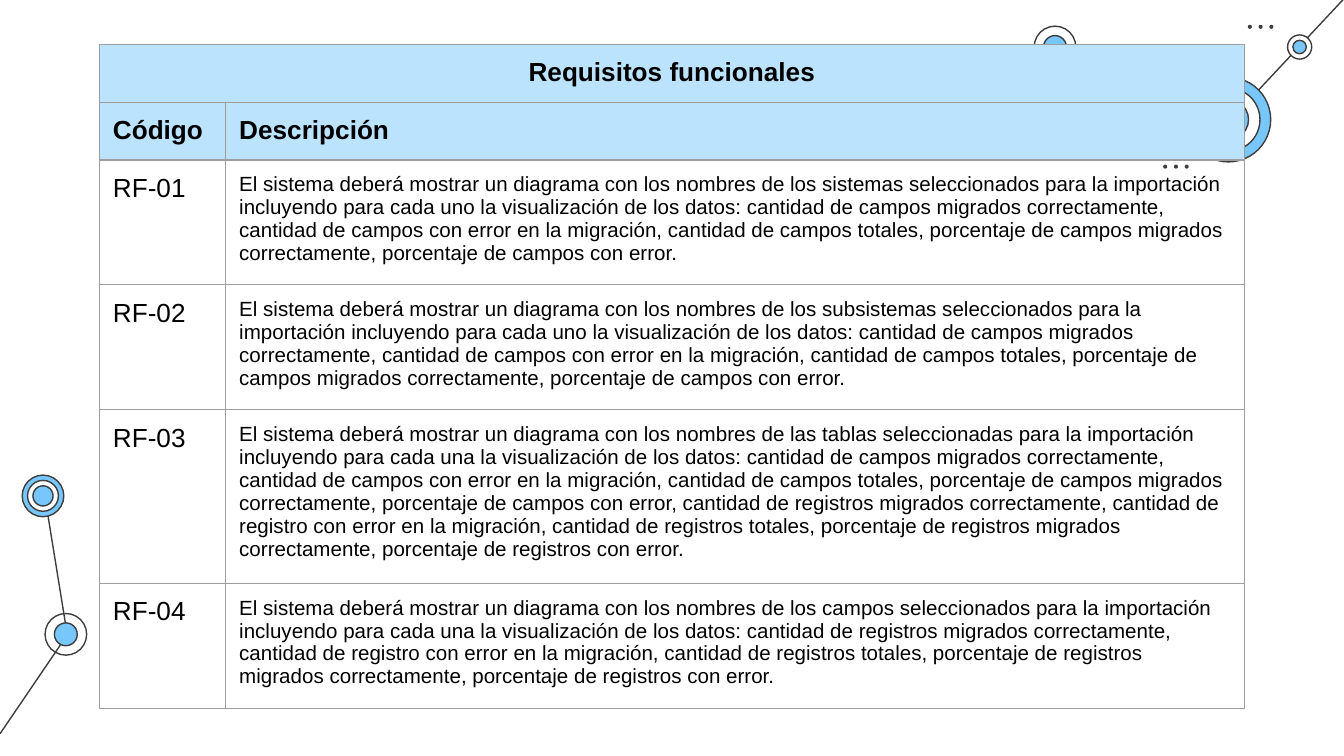
from lxml import etree
from pptx import Presentation
from pptx import util as u
from pptx.dml.color import RGBColor
from pptx.enum import shapes, text
from pptx.oxml import ns

COLORS = {"ink": "3D3D3D", "blue": "77C6FC", "pale": "BBE3FE",
          "white": "FFFFFF", "black": "000000", "border": "9E9E9E"}
PAGE_WIDTH = 10
PAGE_HEIGHT = PAGE_WIDTH * 9 / 16
HEADER_ROWS = 2
COLUMNS = [0.94, 7.58]
ROWS = [0.43, 0.43, 0.93, 0.93, 1.29, 0.93]


def color(name):
    """Return the named colour."""
    return RGBColor.from_string(COLORS[name])


def metrics(plural, with_error):
    """List the figures shown for one kind of item."""
    return (f"cantidad de {plural} migrados correctamente, "
            f"cantidad de {with_error} con error en la migración, "
            f"cantidad de {plural} totales, "
            f"porcentaje de {plural} migrados correctamente, "
            f"porcentaje de {plural} con error")


def requirement(selected, each, figures):
    """Word one functional requirement."""
    return (f"El sistema deberá mostrar un diagrama con los nombres de {selected} "
            f"para la importación incluyendo para cada {each} la visualización "
            f"de los datos: {figures}.")


FIELDS = metrics("campos", "campos")
RECORDS = metrics("registros", "registro")
REQUIREMENTS = [
    requirement("los sistemas seleccionados", "uno", FIELDS),
    requirement("los subsistemas seleccionados", "uno", FIELDS),
    requirement("las tablas seleccionadas", "una", f"{FIELDS}, {RECORDS}"),
    requirement("los campos seleccionados", "una", RECORDS),
]


def add_link(page, start, end):
    """Draw a thin line between two points."""
    ends = [u.Inches(value) for value in (*start, *end)]
    link = page.shapes.add_connector(shapes.MSO_CONNECTOR.STRAIGHT, *ends)
    link.line.color.rgb = color("ink")
    link.line.width = u.Pt(0.75)
    etree.SubElement(link._element.spPr, ns.qn("a:effectLst"))


def add_disc(page, center, diameter, fill, outlined=True):
    """Draw a circle around a center point."""
    left, top = (u.Inches(value - diameter / 2) for value in center)
    size = u.Inches(diameter)
    disc = page.shapes.add_shape(shapes.MSO_SHAPE.OVAL, left, top, size, size)
    disc.shadow.inherit = False
    if fill:
        disc.fill.solid()
        disc.fill.fore_color.rgb = color(fill)
    else:
        disc.fill.background()
    if outlined:
        disc.line.color.rgb = color("ink")
        disc.line.width = u.Pt(0.75)
    else:
        disc.line.fill.background()


def add_node(page, center, rings):
    """Draw concentric circles from the outside in."""
    for diameter, fill in rings:
        add_disc(page, center, diameter, fill)


def add_dots(page, left, middle):
    """Draw a row of three small dots."""
    for index in range(3):
        add_disc(page, (left + index * 0.08, middle), 0.03, "ink", False)


def add_left_network(page):
    """Draw the linked nodes at the lower left."""
    add_link(page, (0.5, 4.72), (0.33, 3.67))
    add_link(page, (0, 5.46), (0.49, 4.74))
    add_node(page, (0.49, 4.72), [(0.31, None), (0.17, "blue")])
    add_node(page, (0.32, 3.69), [(0.31, "blue"), (0.23, "white"), (0.15, "blue")])


def add_right_network(page):
    """Draw the linked nodes and dots at the upper right."""
    add_link(page, (9.14, 0.92), (7.87, 0.32))
    add_link(page, (10, -0.01), (9.14, 0.91))
    add_node(page, (9.14, 0.89), [(0.63, "blue"), (0.47, "white"), (0.3, "blue")])
    add_node(page, (7.85, 0.35), [(0.31, "white"), (0.17, "blue")])
    add_node(page, (9.67, 0.35), [(0.18, "white"), (0.1, "blue")])
    add_dots(page, 9.3, 0.2)
    add_dots(page, 8.67, 1.24)


def style_cell(cell, fill):
    """Set the margins, fill and borders of a cell."""
    cell.margin_left = cell.margin_right = u.Inches(0.1)
    cell.margin_top = cell.margin_bottom = u.Inches(0.1)
    if fill:
        cell.fill.solid()
        cell.fill.fore_color.rgb = color(fill)
    else:
        cell.fill.background()
    properties = cell._tc.get_or_add_tcPr()
    for index, side in enumerate(("lnL", "lnR", "lnT", "lnB")):
        border = etree.Element(ns.qn(f"a:{side}"), w=str(u.Pt(0.75)))
        solid = etree.SubElement(border, ns.qn("a:solidFill"))
        etree.SubElement(solid, ns.qn("a:srgbClr"), val=COLORS["border"])
        properties.insert(index, border)


def write_cell(cell, words, size, bold, align):
    """Write one run of text in a cell."""
    para = cell.text_frame.paragraphs[0]
    para.alignment = align
    span = para.add_run()
    span.text = words
    span.font.name = "Arial"
    span.font.size = u.Pt(size)
    span.font.bold = bold
    span.font.color.rgb = color("black")


def add_requirements(page, left, top):
    """Build the table of functional requirements."""
    box = [u.Inches(value) for value in (left, top, sum(COLUMNS), sum(ROWS))]
    table = page.shapes.add_table(len(ROWS), len(COLUMNS), *box).table
    table.first_row = table.horz_banding = False
    for column, width in zip(table.columns, COLUMNS):
        column.width = u.Inches(width)
    for row, height in zip(table.rows, ROWS):
        row.height = u.Inches(height)
    table.cell(0, 0).merge(table.cell(0, 1))
    lines = [["Requisitos funcionales"], ["Código", "Descripción"]]
    lines += [[f"RF-{number:02}", words] for number, words in enumerate(REQUIREMENTS, 1)]
    for row, line in enumerate(lines):
        header = row < HEADER_ROWS
        for column in range(len(COLUMNS)):
            style_cell(table.cell(row, column), "pale" if header else None)
        for column, words in enumerate(line):
            size = 14 if header or column == 0 else 11
            align = text.PP_ALIGN.CENTER if row == 0 else text.PP_ALIGN.LEFT
            write_cell(table.cell(row, column), words, size, header, align)


def main():
    """Build and save the deck."""
    deck = Presentation()
    deck.slide_width = u.Inches(PAGE_WIDTH)
    deck.slide_height = u.Inches(PAGE_HEIGHT)
    page = deck.slides.add_slide(deck.slide_layouts[6])
    add_left_network(page)
    add_right_network(page)
    add_requirements(page, 0.74, 0.33)
    deck.save("out.pptx")


if __name__ == "__main__":
    main()
